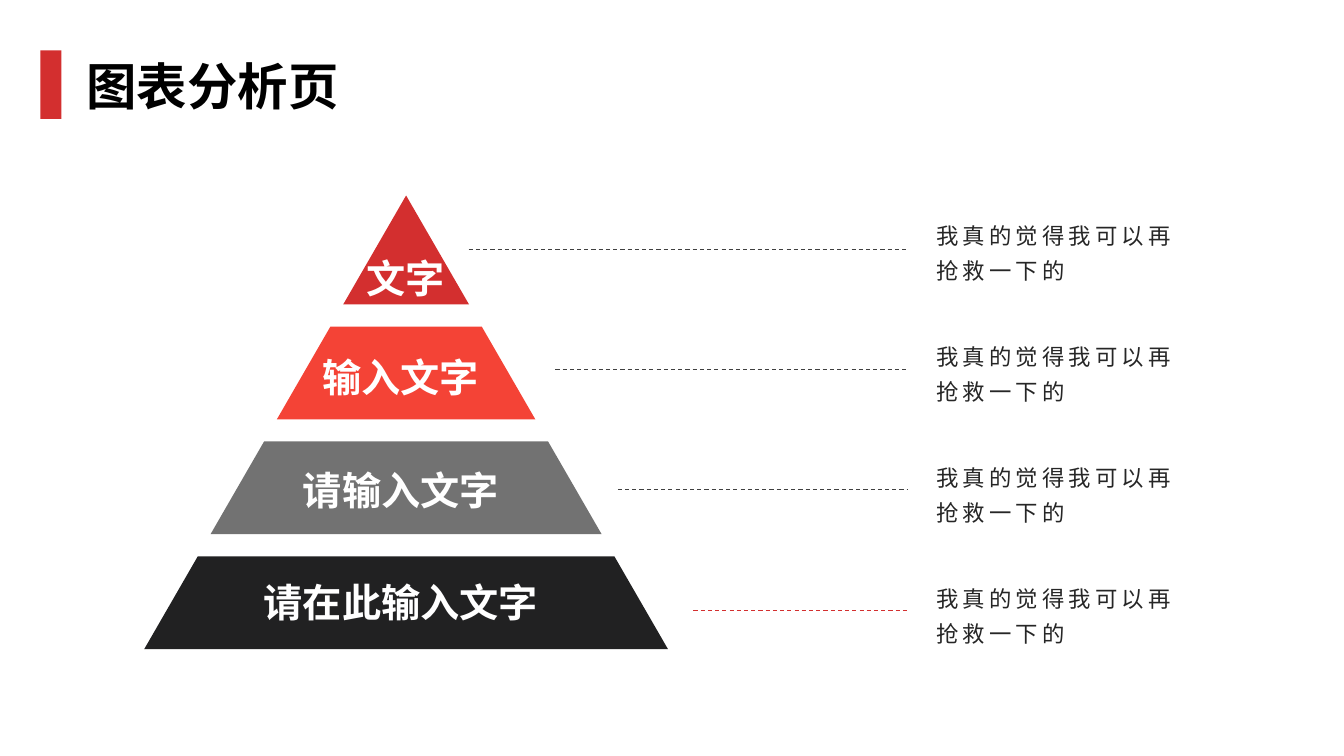
from dataclasses import dataclass
from math import radians, tan

from lxml.etree import SubElement
from pptx import Presentation
from pptx.dml.color import RGBColor
from pptx.enum.dml import MSO_LINE
from pptx.enum.shapes import MSO_CONNECTOR, MSO_SHAPE
from pptx.enum.text import MSO_AUTO_SIZE, PP_ALIGN
from pptx.oxml.ns import qn
from pptx.util import Inches, Pt

COLUMNS, ROWS = 64, 36
CELL = Inches(7.5) // ROWS


@dataclass(frozen=True)
class Theme:
    font: str = "Noto Sans CJK SC"
    red: str = "D32F2F"
    bright_red: str = "F44336"
    gray: str = "727272"
    black: str = "212122"
    title_ink: str = "000000"
    label_ink: str = "FFFFFF"
    note_ink: str = "262626"
    leader_ink: str = "404040"
    title_size: int = 36
    label_size: int = 28
    note_size: int = 16
    leader_width: float = 0.75


def cells(*counts):
    """Turn counts of grid cells into lengths."""
    return [round(count * CELL) for count in counts]


def apply_format(target, values):
    for name, value in values.items():
        setattr(target, name, value)


class PyramidSlide:
    def __init__(self, presentation, theme):
        self.theme = theme
        self.slide = presentation.slides.add_slide(presentation.slide_layouts[6])
        self.shapes = self.slide.shapes

    def paint(self, shape, color):
        shape.shadow.inherit = False
        shape.fill.solid()
        shape.fill.fore_color.rgb = RGBColor.from_string(color)
        shape.line.fill.background()

    def bar(self, box, color):
        self.paint(self.shapes.add_shape(MSO_SHAPE.RECTANGLE, *cells(*box)), color)

    def tier(self, center, top, bottom, half_top, half_bottom, color):
        corners = [
            cells(center - half_top, top),
            cells(center + half_top, top),
            cells(center + half_bottom, bottom),
            cells(center - half_bottom, bottom),
        ]
        builder = self.shapes.build_freeform(*corners[0])
        builder.add_line_segments(corners[1:], close=True)
        self.paint(builder.convert_to_shape(), color)

    def leader(self, start, end, row, color):
        connector = self.shapes.add_connector(
            MSO_CONNECTOR.STRAIGHT, *cells(start, row, end, row))
        connector.line.color.rgb = RGBColor.from_string(color)
        apply_format(connector.line, {
            "width": Pt(self.theme.leader_width), "dash_style": MSO_LINE.DASH})
        SubElement(connector._element.spPr, qn("a:effectLst"))

    def text(self, box, words, size, color, bold=False, spacing=0, **paragraph_format):
        """Add a text box; spacing is the gap between letters in points."""
        frame = self.shapes.add_textbox(*cells(*box)).text_frame
        apply_format(frame, {
            "word_wrap": True, "auto_size": MSO_AUTO_SIZE.SHAPE_TO_FIT_TEXT})
        paragraph = frame.paragraphs[0]
        apply_format(paragraph, paragraph_format)
        run = paragraph.add_run()
        run.text = words
        run.font.color.rgb = RGBColor.from_string(color)
        apply_format(run.font, {
            "name": self.theme.font, "size": Pt(size), "bold": bold})
        properties = run._r.get_or_add_rPr()
        SubElement(properties, qn("a:ea"), typeface=self.theme.font)
        if spacing:
            properties.set("spc", str(spacing * 100))


def main():
    presentation = Presentation()
    apply_format(presentation, {
        "slide_width": COLUMNS * CELL, "slide_height": ROWS * CELL})
    theme = Theme()
    page = PyramidSlide(presentation, theme)

    page.bar((1.92, 2.4, 1.01, 3.26), theme.red)
    page.text((3.65, 2.4, 15.7, 3.41), "图表分析页",
              theme.title_size, theme.title_ink, bold=True)

    apex_column, apex_row = 19.34, 9.31
    first_bottom, tier_pitch, tier_height = 14.5, 5.47, 4.42
    slope = tan(radians(30))
    # label, fill, label left, label top, leader start, leader color
    tiers = [
        ("文字", theme.red, 11.14, 11.86, 22.32, theme.leader_ink),
        ("输入文字", theme.bright_red, 10.9, 16.61, 26.45, theme.leader_ink),
        ("请输入文字", theme.gray, 10.9, 21.98, 29.42, theme.leader_ink),
        ("请在此输入文字", theme.black, 10.9, 27.31, 33.02, theme.red),
    ]
    for index, (label, fill, left, label_top, start, leader_color) in enumerate(tiers):
        bottom = first_bottom + index * tier_pitch
        top = bottom - tier_height if index else apex_row
        half_top, half_bottom = ((row - apex_row) * slope for row in (top, bottom))
        page.tier(apex_column, top, bottom, half_top, half_bottom, fill)
        page.text((left, label_top, 16.37, 2.74), label, theme.label_size,
                  theme.label_ink, bold=True, alignment=PP_ALIGN.CENTER)
        page.leader(start, 43.25, 11.86 + index * 5.73, leader_color)
        page.text((44.11, 9.98 + index * 5.76, 12.34, 3.84),
                  "我真的觉得我可以再抢救一下的", theme.note_size,
                  theme.note_ink, spacing=3, line_spacing=1.3)

    presentation.save("out.pptx")


if __name__ == "__main__":
    main()
